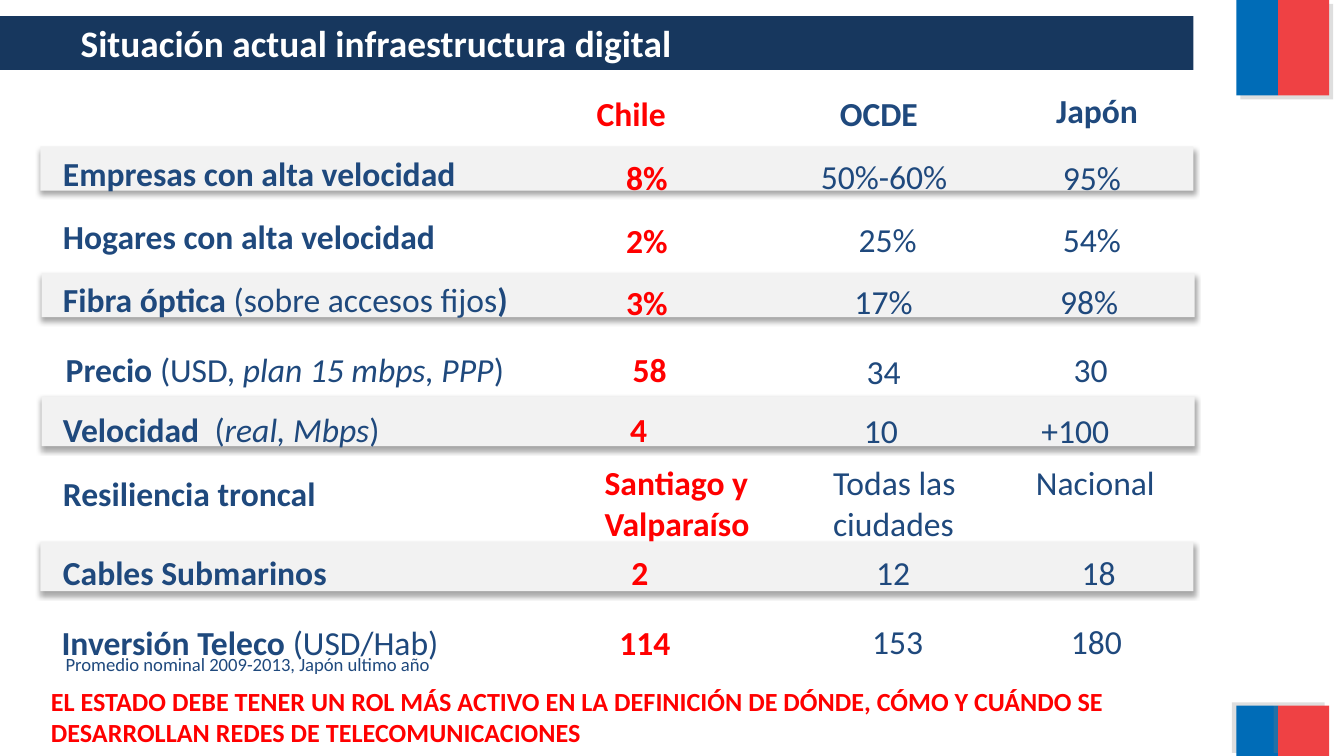
from lxml import etree
from pptx import Presentation
from pptx.dml.color import RGBColor
from pptx.enum.shapes import MSO_SHAPE as SHAPE
from pptx.enum.text import MSO_ANCHOR as ANCHOR, PP_ALIGN as ALIGN
from pptx.oxml.ns import qn
from pptx.util import Inches, Pt

NAVY, BLUE, RED, GREY, WHITE = "17375E", "1F497D", "FF0000", "F2F2F2", "FFFFFF"
B, N, I = {"bold": True}, {"bold": False}, {"bold": False, "italic": True}
SLIDE_W = 10
SLIDE_H = SLIDE_W * 9 / 16
LINE_H = 0.4

TITLE = "Situación actual infraestructura digital"
NOTE = "Promedio nominal 2009-2013, Japón ultimo año"
MESSAGE = ("EL ESTADO DEBE TENER UN ROL MÁS ACTIVO EN LA DEFINICIÓN DE DÓNDE, "
           "CÓMO Y CUÁNDO SE DESARROLLAN REDES DE TELECOMUNICACIONES")

# Column origins; cells are (text, offset in column, offset in row, width)
LABEL_X = 0.37
COLUMNS = [(4.3, RED, B), (6.0, BLUE, N), (7.6, BLUE, N)]
HEADERS = [("Chile", 0.04, 0.02, 0.72), ("OCDE", 0.15, 0.02, 0.79),
           ("Japón", 0.16, 0, 0.82)]
HEADER_Y = 0.62

# (row top, label offset, label width, label runs, cells)
ROWS = [
    (1.09, 0, 5.16, [("Empresas con alta velocidad", B)],
     [("8%", 0.26, 0.03, 0.51), ("50%-60%", 0.01, 0.02, 1.15), ("95%", 0.21, 0.03, 0.64)]),
    (1.56, 0, 4.3, [("Hogares con alta velocidad", B)],
     [("2%", 0.26, 0.03, 0.51), ("25%", 0.29, 0.02, 0.64), ("54%", 0.21, 0.02, 0.64)]),
    (2.03, 0, 4.3, [("Fibra óptica ", B), ("(sobre accesos fijos", N), (")", B)],
     [("3%", 0.26, 0.02, 0.51), ("17%", 0.26, 0.01, 0.64), ("98%", 0.19, 0.01, 0.64)]),
    (2.55, 0.02, 4.12, [("Precio ", B), ("(USD, ", N), ("plan 15 mbps, PPP", I), (")", N)],
     [("58", 0.31, 0, 0.46), ("34", 0.35, 0.01, 0.46), ("30", 0.29, 0, 0.46)]),
    (2.99, 0, 4.59, [("Velocidad  ", B), ("(", N), ("real, Mbps", I), (")", N)],
     [("4", 0.29, 0, 0.33), ("10", 0.33, 0.01, 0.46), ("+100", 0.05, 0.01, 0.71)]),
    (3.47, 0, 3.84, [("Resiliencia troncal", B)],
     [("Santiago y\nValparaíso", 0.1, -0.08, 1.78),
      ("Todas las ciudades", 0.1, -0.08, 1.22), ("Nacional", 0.01, -0.08, 1.1)]),
    (4.06, 0, 3.84, [("Cables Submarinos", B)],
     [("2", 0.3, 0, 0.39), ("12", 0.42, 0, 0.47), ("18", 0.35, 0, 0.45)]),
    (4.58, -0.01, 3.84, [("Inversión Teleco ", B), ("(USD/Hab)", N)],
     [("114", 0.21, 0, 0.59), ("153", 0.39, -0.01, 0.64), ("180", 0.27, -0.01, 0.64)]),
]

# Shaded rows: left, top, height
BANDS = [(0.3, 4.03, 0.37), (0.31, 2.95, 0.37), (0.31, 2.03, 0.33), (0.3, 1.09, 0.33)]
BAND_W = 8.58
BAND_SHADOW = ("000000", 35, 3.1, 1.8, 90)

# Corner blocks: top, height, shadow direction
CORNERS = [(0, 0.71, 45), (5.25, SLIDE_H - 5.25, 215)]
STRIPES = [(9.2, 0.31, "006CB7"), (9.51, 0.38, "EF4144")]


def rgb(value):
    return RGBColor.from_string(value)


def add_shadow(s, color, alpha, blur, dist, angle):
    """Outer shadow: alpha in percent, blur and distance in points, angle in degrees."""
    effects = s._element.spPr.find(qn("a:effectLst"))
    outer = etree.SubElement(effects, qn("a:outerShdw"), blurRad=str(Pt(blur)),
                             dist=str(Pt(dist)), dir=str(angle * 60000),
                             algn="tl", rotWithShape="0")
    clr = etree.SubElement(outer, qn("a:srgbClr"), val=color)
    etree.SubElement(clr, qn("a:alpha"), val=str(alpha * 1000))


def add_rect(slide, x, y, w, h, color, shadow=None):
    s = slide.shapes.add_shape(SHAPE.RECTANGLE, *map(Inches, (x, y, w, h)))
    s.fill.solid()
    s.fill.fore_color.rgb = rgb(color)
    s.line.fill.background()
    s.shadow.inherit = False
    if shadow:
        add_shadow(s, *shadow)
    return s


def add_runs(p, runs, size, color):
    for text, style in runs:
        for n, line in enumerate(text.split("\n")):
            if n:
                p.add_line_break()
            r = p.add_run()
            r.text = line
            r.font.color.rgb = rgb(color)
            for name, value in {"name": "Calibri", "size": Pt(size), **style}.items():
                setattr(r.font, name, value)


def add_text(slide, x, y, w, runs, color, size=18, h=LINE_H, wrap=True):
    tf = slide.shapes.add_textbox(*map(Inches, (x, y, w, h))).text_frame
    tf.word_wrap = wrap
    add_runs(tf.paragraphs[0], runs, size, color)


def add_cells(slide, y, cells, style=None):
    for (x, color, col_style), (text, dx, dy, w) in zip(COLUMNS, cells):
        two_lines = len(text.split()) > 1
        add_text(slide, x + dx, y + dy, w, [(text, style or col_style)], color,
                 h=0.71 if two_lines else LINE_H, wrap=two_lines)


def main():
    prs = Presentation()
    prs.slide_width, prs.slide_height = Inches(SLIDE_W), Inches(SLIDE_H)
    slide = prs.slides.add_slide(prs.slide_layouts[6])

    for y, h, angle in CORNERS:
        for x, w, color in STRIPES:
            add_rect(slide, x, y, w, h, color, ("808080", 25, 0, 3, angle))
    for x, y, h in BANDS:
        add_rect(slide, x, y, BAND_W, h, GREY, BAND_SHADOW)

    tf = add_rect(slide, 0, 0.12, 8.88, 0.4, NAVY).text_frame
    tf.margin_left = Inches(0.6)
    tf.vertical_anchor = ANCHOR.MIDDLE
    p = tf.paragraphs[0]
    p.alignment = ALIGN.LEFT
    add_runs(p, [(TITLE, B)], 20, WHITE)

    add_cells(slide, HEADER_Y, HEADERS, B)
    for y, dx, w, label, cells in ROWS:
        add_text(slide, LABEL_X + dx, y, w, label, BLUE)
        add_cells(slide, y, cells)

    add_text(slide, 0.39, 4.81, 2.95, [(NOTE, N)], BLUE, 10, 0.27, wrap=False)
    add_text(slide, 0.28, 5.05, BAND_W, [(MESSAGE, B)], RED, 14, 0.57)
    prs.save("out.pptx")


if __name__ == "__main__":
    main()
